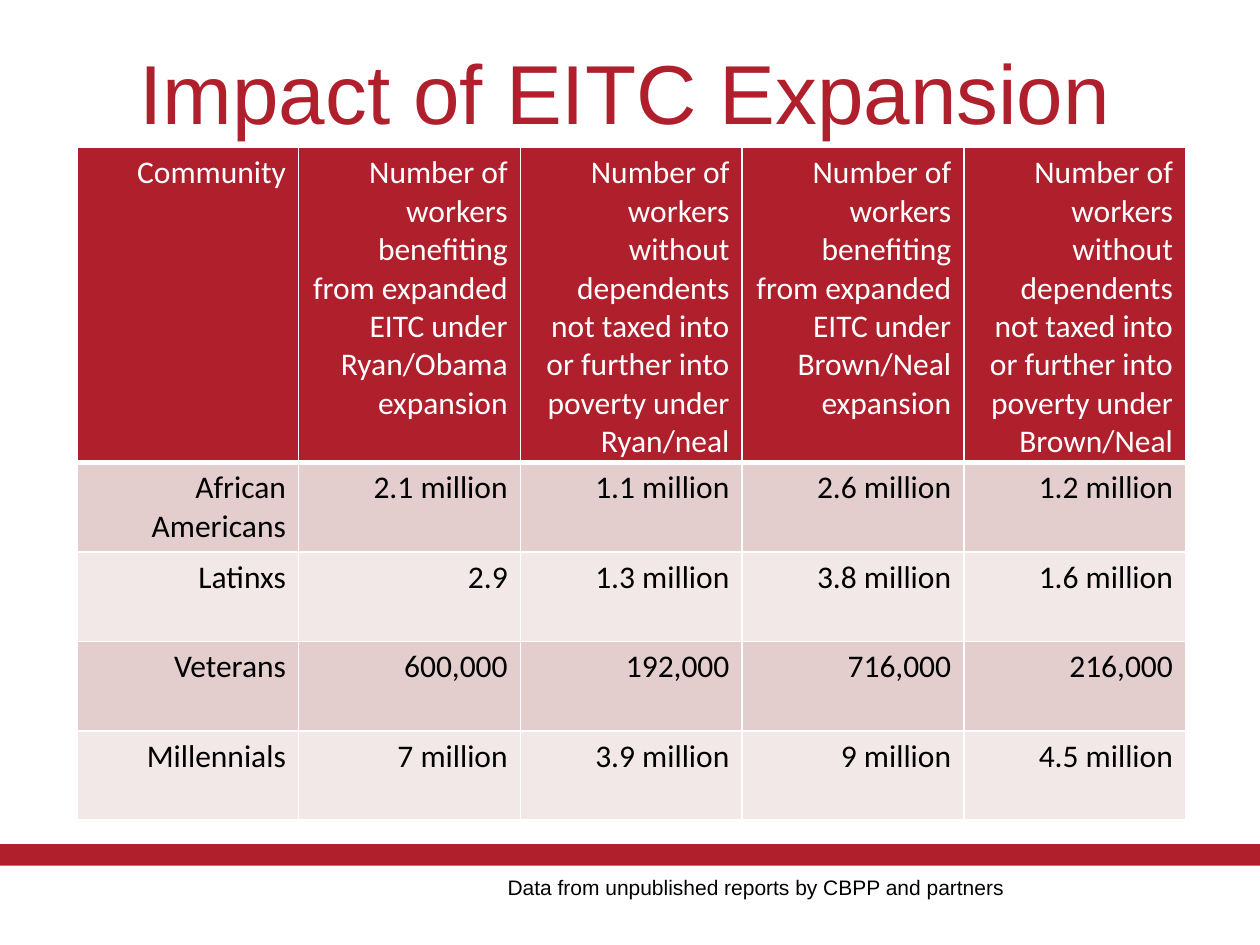
from lxml import etree
from pptx import Presentation
from pptx import util as u
from pptx.dml.color import RGBColor
from pptx.enum import shapes, text
from pptx.oxml.ns import qn

TITLE = "Impact of EITC Expansion"
SOURCE = "Data from unpublished reports by CBPP and partners"
HEADINGS = [
    "Community",
    "Number of workers benefiting from expanded EITC under Ryan/Obama expansion",
    "Number of workers without dependents not taxed into or further into poverty under Ryan/neal",
    "Number of workers benefiting from expanded EITC under Brown/Neal expansion",
    "Number of workers without dependents not taxed into or further into poverty under Brown/Neal",
]
COMMUNITIES = [
    ("African Americans", "2.1 million", "1.1 million", "2.6 million", "1.2 million"),
    ("Latinxs", "2.9", "1.3 million", "3.8 million", "1.6 million"),
    ("Veterans", "600,000", "192,000", "716,000", "216,000"),
    ("Millennials", "7 million", "3.9 million", "9 million", "4.5 million"),
]
THEME = {
    "red": "AF1F2C", "bands": ("E3CDCD", "F2E8E8"), "white": "FFFFFF", "black": "000000",
    "display": "Arial", "body": "Calibri",
    "title_size": 47.8, "table_size": 18, "source_size": 12,
    "rule": 1, "header_rule": 3,
}
COLUMN_WIDTH, HEADER_HEIGHT, ROW_HEIGHT = 1.76, 1.75, 0.71


def box(left, top, width, height):
    return [u.Inches(value) for value in (left, top, width, height)]


def style(frame, align, font, size, color):
    paragraph = frame.paragraphs[0]
    paragraph.alignment = align
    for run in paragraph.runs:
        run.font.name = font
        run.font.size = u.Pt(size)
        run.font.color.rgb = RGBColor.from_string(color)


def add_label(slide, place, wording, align, anchor, size, color):
    frame = slide.shapes.add_textbox(*box(*place)).text_frame
    frame.word_wrap = True
    frame.vertical_anchor = anchor
    frame.text = wording
    style(frame, align, THEME["display"], size, color)


def add_borders(cell, top, bottom):
    properties = cell._tc.get_or_add_tcPr()
    widths = {"lnL": THEME["rule"], "lnR": THEME["rule"], "lnT": top, "lnB": bottom}
    for side, width in widths.items():
        line = etree.SubElement(properties, qn(f"a:{side}"), w=str(u.Pt(width)))
        fill = etree.SubElement(line, qn("a:solidFill"))
        etree.SubElement(fill, qn("a:srgbClr"), val=THEME["white"])


def add_impact_table(slide):
    rows = [HEADINGS, *COMMUNITIES]
    heights = [HEADER_HEIGHT] + [ROW_HEIGHT] * len(COMMUNITIES)
    place = box(0.61, 1.17, COLUMN_WIDTH * len(HEADINGS), sum(heights))
    impact = slide.shapes.add_table(len(rows), len(HEADINGS), *place).table
    for column in impact.columns:
        column.width = u.Inches(COLUMN_WIDTH)
    for index, (entries, height) in enumerate(zip(rows, heights)):
        impact.rows[index].height = u.Inches(height)
        heading = index == 0
        background = THEME["red"] if heading else THEME["bands"][(index - 1) % 2]
        ink = THEME["white"] if heading else THEME["black"]
        top = THEME["header_rule"] if index == 1 else THEME["rule"]
        bottom = THEME["header_rule"] if heading else THEME["rule"]
        for cell, entry in zip(impact.rows[index].cells, entries):
            add_borders(cell, top, bottom)
            cell.fill.solid()
            cell.fill.fore_color.rgb = RGBColor.from_string(background)
            cell.text_frame.text = entry
            style(cell.text_frame, text.PP_ALIGN.RIGHT, THEME["body"], THEME["table_size"], ink)
            for run in cell.text_frame.paragraphs[0].runs:
                run.font.bold = False


def main():
    """Build the EITC expansion impact slide."""
    deck = Presentation()
    deck.slide_width, deck.slide_height = u.Inches(10), u.Inches(7.5)
    slide = deck.slides.add_slide(deck.slide_layouts[6])

    band = slide.shapes.add_shape(shapes.MSO_SHAPE.RECTANGLE, *box(0, 6.7, 10, 0.17))
    band.shadow.inherit = False
    band.fill.solid()
    band.fill.fore_color.rgb = RGBColor.from_string(THEME["red"])
    band.line.fill.background()

    add_label(slide, (0.12, 6.89, 7.95, 0.5), SOURCE, text.PP_ALIGN.RIGHT,
              text.MSO_ANCHOR.TOP, THEME["source_size"], THEME["black"])
    add_impact_table(slide)
    add_label(slide, (0.51, 0.25, 8.9, 0.92), TITLE, text.PP_ALIGN.CENTER,
              text.MSO_ANCHOR.BOTTOM, THEME["title_size"], THEME["red"])
    deck.save("out.pptx")


if __name__ == "__main__":
    main()
